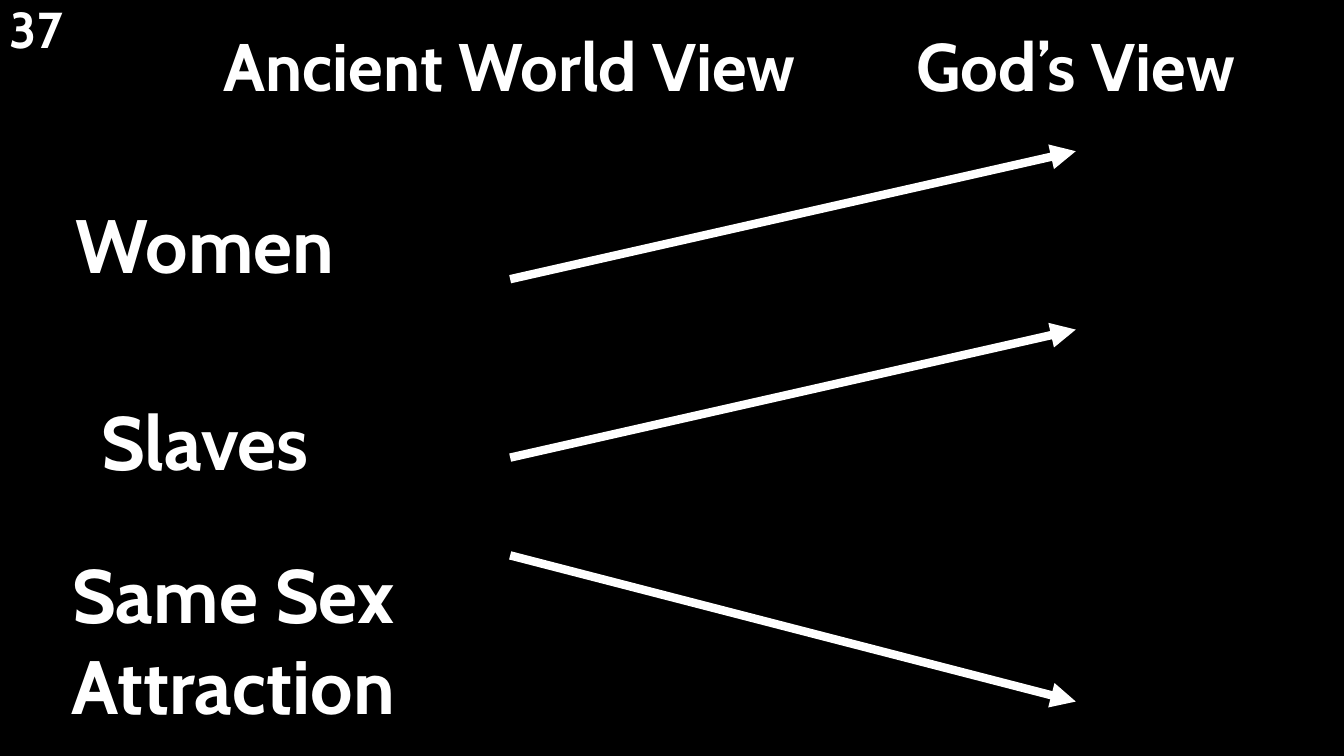
from lxml import etree
from pptx import Presentation
from pptx.dml.color import RGBColor
from pptx.enum.shapes import MSO_CONNECTOR
from pptx.enum.text import MSO_ANCHOR, MSO_AUTO_SIZE, PP_ALIGN
from pptx.oxml.ns import qn
from pptx.util import Pt

PX = 9144  # 100 px to the inch
BLACK = RGBColor(0, 0, 0)
WHITE = RGBColor(255, 255, 255)
STRAIGHT = MSO_CONNECTOR.STRAIGHT
TOP = MSO_ANCHOR.TOP
NO_FIT = MSO_AUTO_SIZE.NONE
CENTER, LEFT = PP_ALIGN.CENTER, PP_ALIGN.LEFT

SLIDE_SIZE = (1333, 750)
NUMBER_BOX = (0, 0, 173, 75)
HEADINGS = [
    ("Ancient World View", (206, 19, 599, 91)),
    ("God’s View", (878, 19, 378, 91)),
]
# label, label box, arrow start height, arrow end height
ROWS = [
    ("Women", (38, 191, 331, 101), 277, 150),
    ("Slaves", (38, 387, 331, 101), 454, 327),
    ("Same Sex Attraction", (0, 539, 463, 192), 551, 696),
]
ARROW_LEFT, ARROW_RIGHT = 506, 1067


def emu(lengths):
    return [length * PX for length in lengths]


def set_all(target, values):
    for name, value in values.items():
        setattr(target, name, value)


def write(shape, text, size, alignment=CENTER, **para_format):
    frame = shape.text_frame
    set_all(frame, {"word_wrap": True, "auto_size": NO_FIT, "vertical_anchor": TOP})
    para = frame.paragraphs[0]
    set_all(para, {"alignment": alignment, **para_format})
    run = para.add_run()
    run.text = text
    set_all(run.font, {"name": "Cabin", "size": Pt(size), "bold": True})
    run.font.color.rgb = WHITE


def add_label(page, text, box, size, **para_format):
    write(page.shapes.add_textbox(*emu(box)), text, size, **para_format)


def add_arrow(page, start, end):
    arrow = page.shapes.add_connector(STRAIGHT, *emu(start + end))
    arrow.line.color.rgb = WHITE
    arrow.line.width = Pt(6)
    etree.SubElement(arrow.line._get_or_add_ln(), qn("a:tailEnd"), type="triangle")
    etree.SubElement(arrow._element.spPr, qn("a:effectLst"))


def add_headings(page):
    (title_text, title_box), (view_text, view_box) = HEADINGS
    title = page.shapes.title
    set_all(title, dict(zip(("left", "top", "width", "height"), emu(title_box))))
    write(title, title_text, 48)
    add_label(page, view_text, view_box, 48)


def add_row(page, label, box, start_y, end_y):
    add_label(page, label, box, 54)
    add_arrow(page, (ARROW_LEFT, start_y), (ARROW_RIGHT, end_y))


def main():
    deck = Presentation()
    deck.slide_width, deck.slide_height = emu(SLIDE_SIZE)
    page = deck.slides.add_slide(deck.slide_layouts.get_by_name("Title Only"))
    page.background.fill.solid()
    page.background.fill.fore_color.rgb = BLACK
    add_headings(page)
    for row in ROWS:
        add_row(page, *row)
    add_label(page, "37", NUMBER_BOX, 36, alignment=LEFT,
              line_spacing=0.9, space_after=Pt(18))
    deck.save("out.pptx")


if __name__ == "__main__":
    main()
